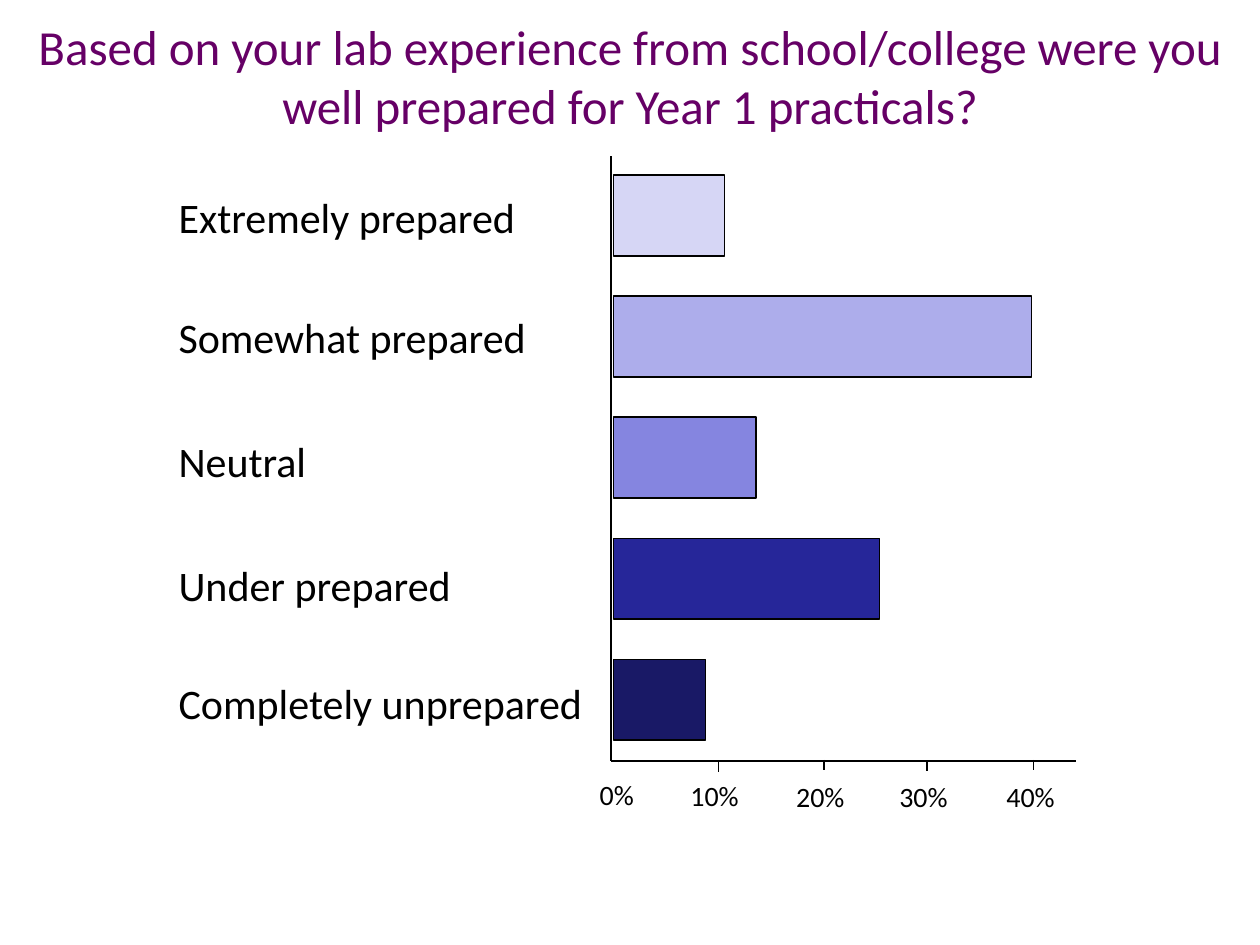
from lxml import etree
from pptx import Presentation
from pptx import util as u
from pptx.dml import color
from pptx.enum import shapes, text
from pptx.oxml import ns

COLORS = {
    "title": "660066",
    "ink": "000000",
    "paper": "FFFFFF",
    "extremely": "D6D6F5",
    "somewhat": "ADADEB",
    "neutral": "8585E0",
    "under": "262699",
    "completely": "191966",
}
TITLE = ("Based on your lab experience\u00a0from school/college\u00a0were you "
         "well prepared for Year 1 practicals?").replace("\u00a0", " ")
RESPONSES = [
    ("Extremely prepared", "extremely", 3.73, 7.39, 2.24),
    ("Somewhat prepared", "somewhat", 6.15, 8.31, 8.43),
    ("Neutral", "neutral", 8.66, 4.17, 2.87),
    ("Under prepared", "under", 11.15, 7.39, 5.36),
    ("Completely unprepared", "completely", 13.54, 8.92, 1.85),
]
TICKS = [
    ("10%", 14.48, 15.37, 13.67, 15.57),
    ("20%", 16.61, 15.32, 15.8, 15.6),
    ("30%", 18.69, 15.34, 17.88, 15.6),
    ("40%", 20.83, 15.32, 20.04, 15.6),
]
AXIS_X, AXIS_TOP, AXIS_Y, AXIS_END = 12.32, 3.15, 15.34, 21.69
BAR_X, BAR_TOP, BAR_PITCH, BAR_HEIGHT = 12.37, 3.53, 2.44, 1.63


def rgb(name):
    return color.RGBColor.from_string(COLORS[name])


def write(sp, content, size, name="ink", align=text.PP_ALIGN.LEFT,
          anchor=text.MSO_ANCHOR.TOP, wrap=True):
    tf = sp.text_frame
    frame = {"word_wrap": wrap, "auto_size": text.MSO_AUTO_SIZE.NONE,
             "vertical_anchor": anchor}
    for key, value in frame.items():
        setattr(tf, key, value)
    p = tf.paragraphs[0]
    p.alignment = align
    r = p.add_run()
    r.text = content
    for key, value in {"name": "Calibri", "size": u.Pt(size)}.items():
        setattr(r.font, key, value)
    r.font.color.rgb = rgb(name)


def set_title(s):
    sp = s.shapes.title
    box = {"left": 0, "top": -0.1, "width": 25.4, "height": 3.23}
    for key, value in box.items():
        setattr(sp, key, u.Cm(value))
    write(sp, TITLE, 28, "title", text.PP_ALIGN.CENTER, text.MSO_ANCHOR.MIDDLE)


def add_rect(s, box, fill, outlined=False):
    sp = s.shapes.add_shape(shapes.MSO_SHAPE.RECTANGLE, *map(u.Cm, box))
    sp.shadow.inherit = False
    sp.fill.solid()
    sp.fill.fore_color.rgb = rgb(fill)
    if outlined:
        sp.line.color.rgb = rgb("ink")
        sp.line.width = u.Pt(0.75)
    else:
        sp.line.fill.background()
    return sp


def add_line(s, ends, width):
    line = s.shapes.add_connector(shapes.MSO_CONNECTOR.STRAIGHT, *map(u.Cm, ends))
    line.line.color.rgb = rgb("ink")
    line.line.width = u.Pt(width)
    etree.SubElement(line._element.spPr, ns.qn("a:effectLst"))


def add_scale_label(s, content, left, top, width):
    sp = s.shapes.add_textbox(*map(u.Cm, (left, top, width, 0.94)))
    write(sp, content, 16, wrap=False)


def add_axes(s):
    add_line(s, (AXIS_X, AXIS_TOP, AXIS_X, AXIS_Y), 1.5)
    add_line(s, (AXIS_X, AXIS_Y, AXIS_END, AXIS_Y), 1.5)
    add_scale_label(s, "0%", 11.84, 15.54, 1.22)
    for content, x, y, left, top in TICKS:
        add_line(s, (x, y, x, y + 0.2), 0.75)
        add_scale_label(s, content, left, top, 1.6)


def main():
    prs = Presentation()
    prs.slide_width, prs.slide_height = u.Cm(25.4), u.Cm(19.05)
    s = prs.slides.add_slide(prs.slide_layouts[5])
    set_title(s)
    for label, _, top, width, _ in RESPONSES:
        write(add_rect(s, (3.35, top, width, 1.27), "paper"), label, 24)
    add_axes(s)
    for i, (_, fill, _, _, length) in enumerate(RESPONSES):
        add_rect(s, (BAR_X, BAR_TOP + BAR_PITCH * i, length, BAR_HEIGHT), fill, True)
    prs.save("out.pptx")


if __name__ == "__main__":
    main()
